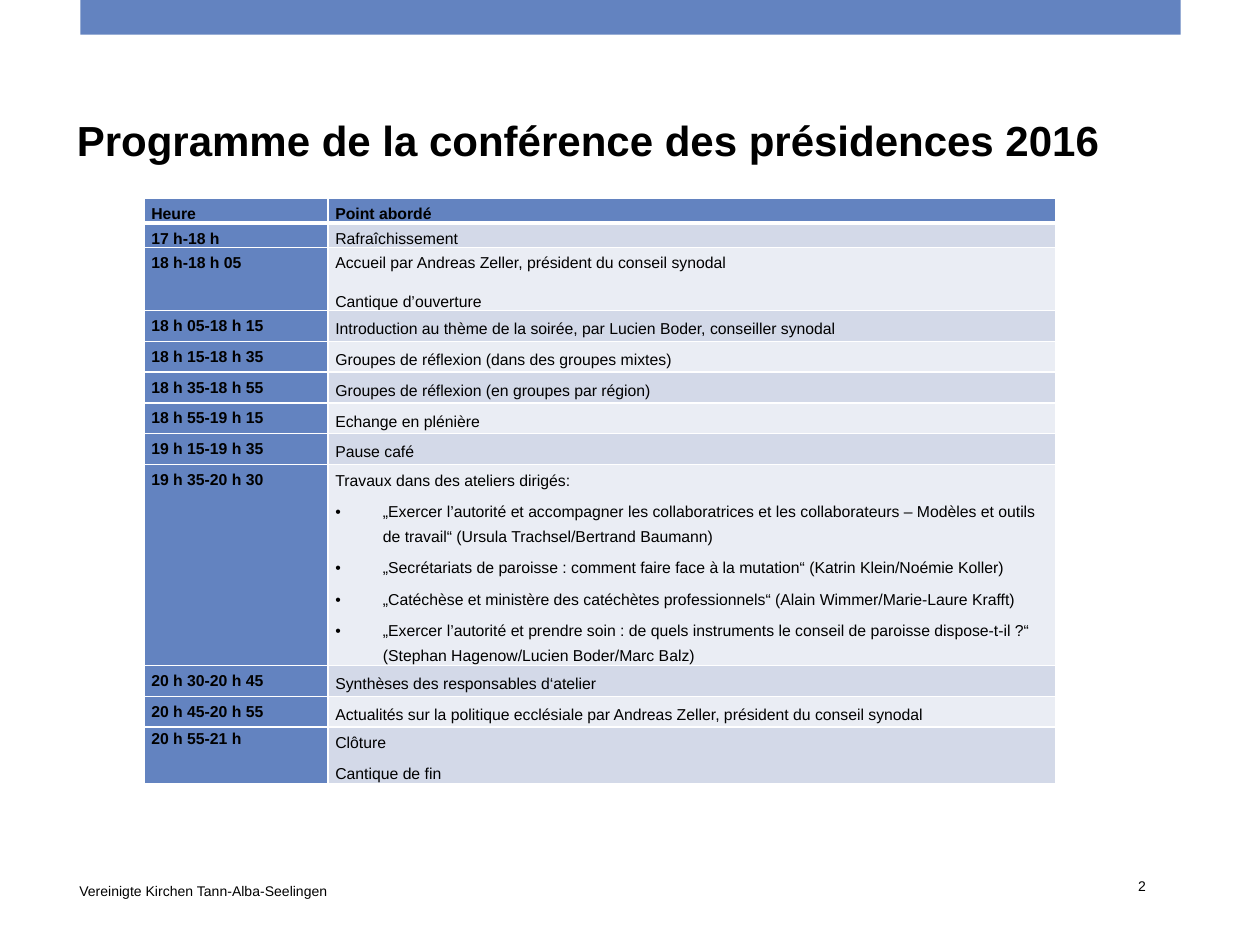
from dataclasses import dataclass

from lxml.etree import SubElement
from pptx import Presentation
from pptx.dml.color import RGBColor
from pptx.enum.shapes import MSO_SHAPE
from pptx.enum.text import MSO_ANCHOR, PP_ALIGN
from pptx.oxml.ns import qn
from pptx.util import Cm, Pt


@dataclass(frozen=True)
class Theme:
    font: str = "Arial"
    text: str = "000000"
    accent: str = "6383C0"
    bands: tuple = ("D3D9E8", "EAEDF4")
    border: str = "FFFFFF"
    title_size: float = 24
    table_size: float = 9
    footer_size: float = 8


@dataclass(frozen=True)
class Line:
    text: str
    before: float = 4
    after: float = 4
    spacing: object = Pt(14)
    bullet: bool = False


def workshop(text, before=4):
    return Line(text, before, 0, bullet=True)


HEADER = (0.46, Line("Heure", 0, 0), [Line("Point abordé", 0, 0)])
PROGRAMME = [
    (0.46, Line("17 h-18 h"), [Line("Rafraîchissement", 0, 0)]),
    (1.14, Line("18 h-18 h 05"), [
        Line("Accueil par Andreas Zeller, président du conseil synodal"),
        Line("Cantique d’ouverture"),
    ]),
    (0.62, Line("18 h 05-18 h 15"), [
        Line("Introduction au thème de la soirée, par Lucien Boder, conseiller synodal"),
    ]),
    (0.62, Line("18 h 15-18 h 35"), [Line("Groupes de réflexion (dans des groupes mixtes)")]),
    (0.62, Line("18 h 35-18 h 55"), [Line("Groupes de réflexion (en groupes par région)")]),
    (0.62, Line("18 h 55-19 h 15"), [Line("Echange en plénière")]),
    (0.62, Line("19 h 15-19 h 35"), [Line("Pause café")]),
    (4.06, Line("19 h 35-20 h 30"), [
        Line("Travaux dans des ateliers dirigés:"),
        workshop("„Exercer l’autorité et accompagner les collaboratrices et les collaborateurs "
                 "– Modèles et outils de travail“ (Ursula Trachsel/Bertrand Baumann)", 0),
        workshop("„Secrétariats de paroisse : comment faire face à la mutation“ "
                 "(Katrin Klein/Noémie Koller)"),
        workshop("„Catéchèse et ministère des catéchètes professionnels“ "
                 "(Alain Wimmer/Marie-Laure Krafft)"),
        workshop("„Exercer l’autorité et prendre soin : de quels instruments le conseil de "
                 "paroisse dispose-t-il ?“ (Stephan Hagenow/Lucien Boder/Marc Balz)"),
    ]),
    (0.62, Line("20 h 30-20 h 45"), [Line("Synthèses des responsables d‘atelier", 0)]),
    (0.62, Line("20 h 45-20 h 55"), [
        Line("Actualités sur la politique ecclésiale par Andreas Zeller, "
             "président du conseil synodal"),
    ]),
    (1.02, Line("20 h 55-21 h", spacing=1.15), [Line("Clôture"), Line("Cantique de fin", 0)]),
]


class PageBuilder:
    def __init__(self, page, theme):
        self.page = page
        self.theme = theme

    def style(self, paragraph, size, bold=False):
        font = paragraph.font
        font.name = self.theme.font
        font.size = Pt(size)
        font.bold = bold
        font.color.rgb = RGBColor.from_string(self.theme.text)

    def bar(self, left, top, width, height):
        bar = self.page.shapes.add_shape(
            MSO_SHAPE.RECTANGLE, Cm(left), Cm(top), Cm(width), Cm(height))
        bar.shadow.inherit = False
        bar.fill.solid()
        bar.fill.fore_color.rgb = RGBColor.from_string(self.theme.accent)
        bar.line.fill.background()

    def text(self, text, left, top, width, height, size, bold=False, align=PP_ALIGN.LEFT):
        box = self.page.shapes.add_textbox(Cm(left), Cm(top), Cm(width), Cm(height))
        frame = box.text_frame
        frame.word_wrap = True
        frame.vertical_anchor = MSO_ANCHOR.BOTTOM
        frame.margin_left = frame.margin_right = frame.margin_top = frame.margin_bottom = 0
        paragraph = frame.paragraphs[0]
        paragraph.text = text
        paragraph.alignment = align
        self.style(paragraph, size, bold)

    def borders(self, cell, top, bottom):
        properties = cell._tc.get_or_add_tcPr()
        for side, points in (("L", 1), ("R", 1), ("T", top), ("B", bottom)):
            line = SubElement(properties, qn(f"a:ln{side}"), w=str(Pt(points)))
            fill = SubElement(line, qn("a:solidFill"))
            SubElement(fill, qn("a:srgbClr"), val=self.theme.border)

    def bullet(self, paragraph):
        properties = paragraph._p.get_or_add_pPr()
        properties.set("marL", str(Cm(0.96)))
        properties.set("indent", str(Cm(-0.96)))
        SubElement(properties, qn("a:buFont"), typeface=self.theme.font)
        SubElement(properties, qn("a:buChar"), char="•")

    def cell(self, cell, lines, color, bold, anchor, top, bottom):
        self.borders(cell, top, bottom)
        cell.fill.solid()
        cell.fill.fore_color.rgb = RGBColor.from_string(color)
        cell.margin_left = cell.margin_right = Cm(0.15)
        cell.margin_top = cell.margin_bottom = 0
        cell.vertical_anchor = anchor
        frame = cell.text_frame
        for index, line in enumerate(lines):
            paragraph = frame.add_paragraph() if index else frame.paragraphs[0]
            paragraph.text = line.text
            paragraph.line_spacing = line.spacing
            paragraph.space_before = Pt(line.before)
            paragraph.space_after = Pt(line.after)
            if line.bullet:
                self.bullet(paragraph)
            self.style(paragraph, self.theme.table_size, bold)

    def schedule(self, left, top, widths, header, entries):
        rows = [header, *entries]
        heights = [height for height, _, _ in rows]
        table = self.page.shapes.add_table(
            len(rows), len(widths), Cm(left), Cm(top), Cm(sum(widths)), Cm(sum(heights))).table
        for column, width in zip(table.columns, widths):
            column.width = Cm(width)
        for index, (height, time, topics) in enumerate(rows):
            table.rows[index].height = Cm(height)
            is_header = index == 0
            edges = (3 if index == 1 else 1, 3 if is_header else 1)
            band = self.theme.accent if is_header else self.theme.bands[(index - 1) % 2]
            time_anchor = MSO_ANCHOR.MIDDLE if index < 2 else MSO_ANCHOR.TOP
            self.cell(table.cell(index, 0), [time], self.theme.accent, True, time_anchor, *edges)
            self.cell(table.cell(index, 1), topics, band, is_header, MSO_ANCHOR.MIDDLE, *edges)


def main():
    deck = Presentation()
    deck.slide_width, deck.slide_height = Cm(25.4), Cm(19.05)
    theme = Theme()
    builder = PageBuilder(deck.slides.add_slide(deck.slide_layouts[6]), theme)
    builder.bar(1.62, 0, 22.18, 0.7)
    builder.text("Programme de la conférence des présidences 2016",
                 1.55, 0, 22.23, 3.33, theme.title_size, bold=True)
    builder.schedule(2.9, 4, (3.71, 14.68), HEADER, PROGRAMME)
    builder.text("Vereinigte Kirchen Tann-Alba-Seelingen",
                 1.6, 17.53, 5.41, 0.6, theme.footer_size)
    builder.text("2", 21.1, 17.53, 2, 0.5, theme.footer_size, align=PP_ALIGN.RIGHT)
    deck.save("out.pptx")


if __name__ == "__main__":
    main()
